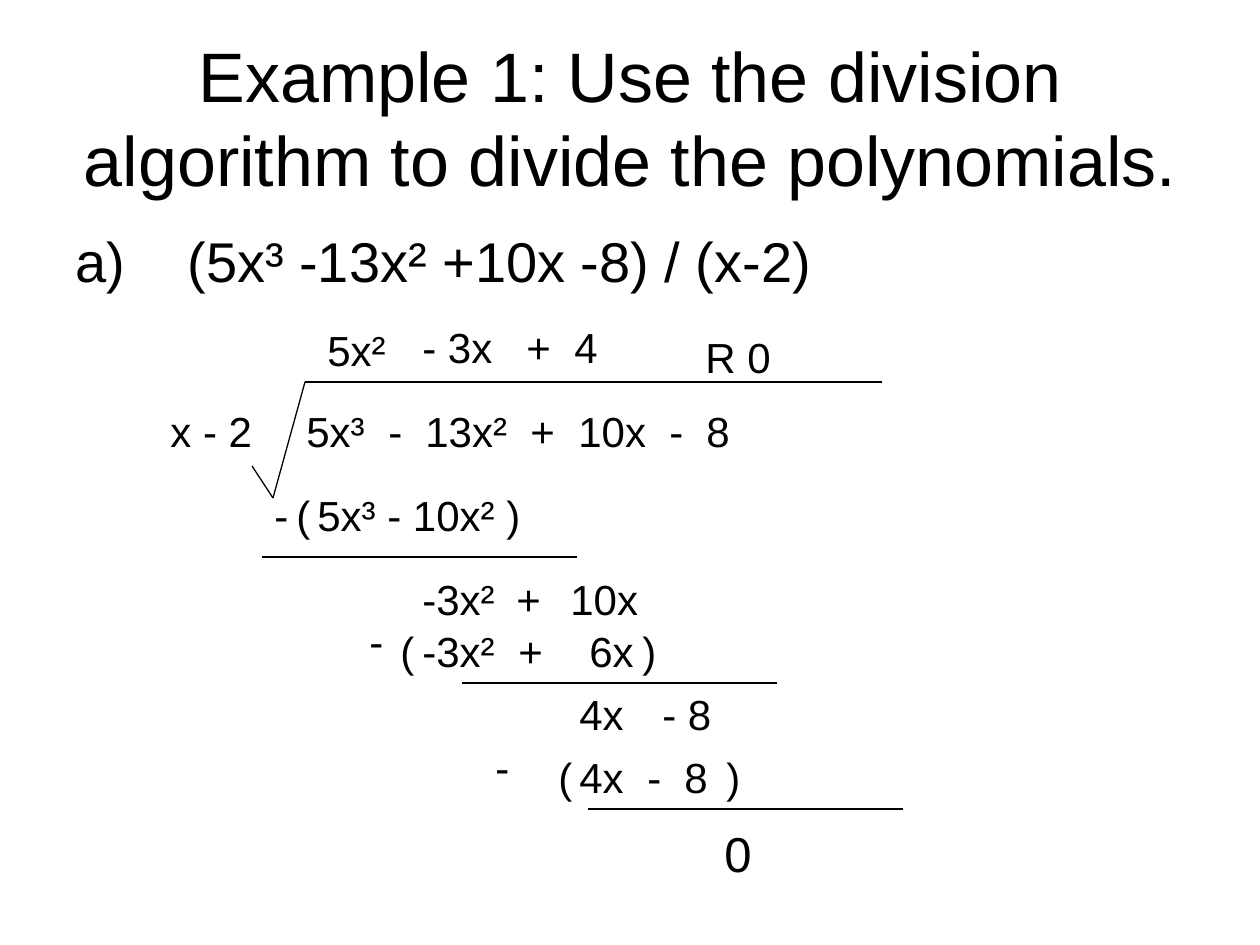
from lxml import etree
from pptx import Presentation
from pptx.dml.color import RGBColor
from pptx.enum.shapes import MSO_CONNECTOR
from pptx.enum.text import MSO_ANCHOR, MSO_AUTO_SIZE, PP_ALIGN
from pptx.oxml.ns import qn
from pptx.util import Emu, Pt

LINE = MSO_CONNECTOR.STRAIGHT
MIDDLE = MSO_ANCHOR.MIDDLE
NO_FIT = MSO_AUTO_SIZE.NONE
CENTER = PP_ALIGN.CENTER
BLACK = "000000"
FONT = "Arial"
SCALE = 914400 / 126
ROW = 63
RULE = 315

TERMS = [
    ("5x³\t-\t13x²\t+\t10x\t-\t8", 294, 399, 456, (82, 119, 224, 272, 363, 400)),
    ("x - 2", 158, 399, 110, ()),
    ("5x²", 315, 318, 88, ()),
    ("- 3x", 410, 315, 100, ()),
    ("+\t4", 514, 315, 100, (48,)),
    ("R 0", 693, 325, 94, ()),
    ("5x³ - 10x²", 305, 483, 207, ()),
    ("-3x²", 410, 567, 102, ()),
    ("+\t10x", 504, 567, 150, (54,)),
    ("-3x²\t+\t6x", 410, 619, 242, (96, 167)),
    ("4x", 567, 682, 74, ()),
    ("- 8", 650, 682, 78, ()),
    ("4x\t-\t8", 567, 745, 158, (68, 105)),
]
SIGNS = [
    ("-", 262, 483), ("(", 284, 483), (")", 494, 483),
    ("-", 357, 609), ("(", 388, 619), (")", 630, 619),
    ("-", 483, 735), ("(", 546, 745), (")", 714, 745),
]
ROOT = [(252, 466), (273, 498), (305, 382), (882, 382)]
RULES = [(262, 557), (462, 683), (588, 809)]


def px(num):
    return Emu(round(num * SCALE))


def color(code):
    return RGBColor.from_string(code)


def style(para, size):
    for run in para.runs:
        run.font.name = FONT
        run.font.size = Pt(size)
        run.font.color.rgb = color(BLACK)


def set_tabs(para, stops):
    tabs = etree.SubElement(para._p.get_or_add_pPr(), qn("a:tabLst"))
    for stop in stops:
        etree.SubElement(tabs, qn("a:tab"), pos=str(px(stop)), algn="l")


def add_title(slide, text):
    title = slide.shapes.title
    title.left, title.top = px(63), px(38)
    title.width, title.height = px(1134), px(158)
    frame = title.text_frame
    frame.text = text
    frame.word_wrap = True
    frame.auto_size = NO_FIT
    frame.vertical_anchor = MIDDLE
    para = frame.paragraphs[0]
    para.alignment = CENTER
    style(para, 40)


def add_text(slide, text, left, top, width, stops=(), size=24, height=ROW):
    box = slide.shapes.add_textbox(px(left), px(top), px(width), px(height))
    frame = box.text_frame
    frame.text = text
    frame.word_wrap = bool(stops)
    para = frame.paragraphs[0]
    style(para, size)
    if stops:
        set_tabs(para, stops)


def add_line(slide, start, end):
    line = slide.shapes.add_connector(LINE, *map(px, start + end))
    line.line.color.rgb = color(BLACK)
    line.line.width = Pt(0.75)
    etree.SubElement(line._element.spPr, qn("a:effectLst"))


def main():
    deck = Presentation()
    deck.slide_width, deck.slide_height = px(1260), px(945)
    slide = deck.slides.add_slide(deck.slide_layouts[5])
    add_title(slide, "Example 1: Use the division algorithm to divide the polynomials.")
    add_text(slide, "a)\t(5x³ -13x² +10x -8) / (x-2)", 63, 220, 829, (112,), 32, 94)
    for term in TERMS:
        add_text(slide, *term)
    for text, left, top in SIGNS:
        add_text(slide, text, left, top, 39)
    add_text(slide, "0", 712, 817, 53, size=28, height=72)
    for start, end in zip(ROOT, ROOT[1:]):
        add_line(slide, start, end)
    for left, top in RULES:
        add_line(slide, (left, top), (left + RULE, top))
    deck.save("out.pptx")


if __name__ == "__main__":
    main()
